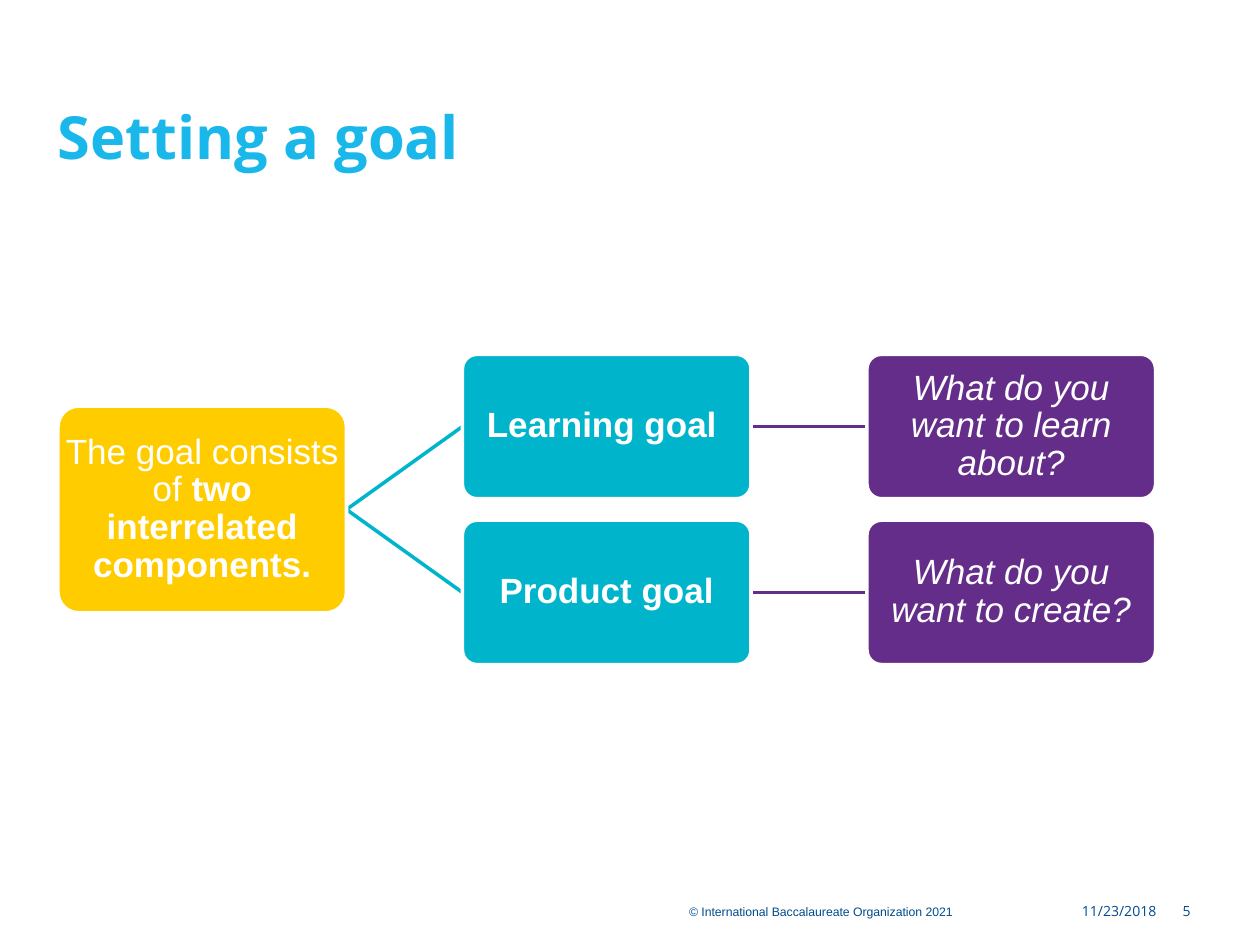
from lxml import etree
from pptx import Presentation
from pptx.dml.color import RGBColor
from pptx.enum.shapes import MSO_CONNECTOR, MSO_SHAPE
from pptx.enum.text import MSO_ANCHOR, MSO_AUTO_SIZE, PP_ALIGN
from pptx.oxml.ns import qn
from pptx.util import Pt

ROUNDED = MSO_SHAPE.ROUNDED_RECTANGLE
STRAIGHT = MSO_CONNECTOR.STRAIGHT
LEFT, CENTER, RIGHT = PP_ALIGN.LEFT, PP_ALIGN.CENTER, PP_ALIGN.RIGHT
TOP, MIDDLE, BOTTOM = MSO_ANCHOR.TOP, MSO_ANCHOR.MIDDLE, MSO_ANCHOR.BOTTOM
LEFT_SIDE, RIGHT_SIDE = 1, 3

COLORS = {
    "white": "FFFFFF",
    "sky": "1AB7EA",
    "navy": "004B8D",
    "yellow": "FFCC00",
    "teal": "00B5CB",
    "purple": "652D8A",
}

# Diagram grid: three columns, two rows, the root centred on the rows
BOX_WIDTH, GOAL_HEIGHT, ROOT_HEIGHT = 164.9, 82.5, 118.1
COLUMN_LEFT, COLUMN_STEP = 33.1, 231.15
ROW_TOP, ROW_STEP = 202.5, 94.8
ROOT_TOP = ROW_TOP + (ROW_STEP + GOAL_HEIGHT - ROOT_HEIGHT) / 2

GOALS = [
    ("Learning goal ", "What do you want to learn about?"),
    ("Product goal", "What do you want to create?"),
]


def color(name):
    return RGBColor.from_string(COLORS[name])


def write(shape, *spans, font="Arial", size=20, ink="white", align=CENTER,
          anchor=MIDDLE, inset=0, spacing=None):
    """Fill a shape with one paragraph of (text, bold, italic) spans."""
    frame = shape.text_frame
    frame.word_wrap = True
    frame.auto_size = MSO_AUTO_SIZE.NONE
    frame.vertical_anchor = anchor
    frame.margin_left = frame.margin_right = Pt(inset)
    frame.margin_top = frame.margin_bottom = Pt(inset)
    para = frame.paragraphs[0]
    para.alignment = align
    para.line_spacing = spacing
    for text, bold, italic in spans:
        span = para.add_run()
        span.text = text
        span.font.name = font
        span.font.size = Pt(size)
        span.font.bold = bold
        span.font.italic = italic
        span.font.color.rgb = color(ink)


def add_title(page, text):
    title = page.shapes.title
    title.left, title.top, title.width, title.height = Pt(33), Pt(25), Pt(647), Pt(73)
    write(title, (text, True, False), font="Open Sans", size=34, ink="sky",
          align=LEFT, anchor=BOTTOM)


def add_footer(page, text, left, width, **style):
    box = page.shapes.add_textbox(Pt(left), Pt(513.4), Pt(width), Pt(11.5))
    write(box, (text, False, False), ink="navy", anchor=TOP, **style)


def add_box(page, column, top, height, fill, *spans):
    box = page.shapes.add_shape(ROUNDED, Pt(COLUMN_LEFT + column * COLUMN_STEP),
                                Pt(top), Pt(BOX_WIDTH), Pt(height))
    box.adjustments[0] = 0.1
    box.shadow.inherit = False
    box.fill.solid()
    box.fill.fore_color.rgb = color(fill)
    box.line.color.rgb = color("white")
    box.line.width = Pt(2)
    write(box, *spans, inset=0.9, spacing=0.9)
    return box


def join(page, start, end, ink):
    line = page.shapes.add_connector(STRAIGHT, 0, 0, 0, 0)
    line.begin_connect(start, RIGHT_SIDE)
    line.end_connect(end, LEFT_SIDE)
    line.line.color.rgb = color(ink)
    line.line.width = Pt(2)
    element = line._element
    etree.SubElement(element.spPr, qn("a:effectLst"))
    # Send behind the boxes so that their white outlines trim the ends
    element.getparent().insert(2, element)


def add_diagram(page):
    root = add_box(page, 0, ROOT_TOP, ROOT_HEIGHT, "yellow",
                   ("The goal consists of ", False, False),
                   ("two interrelated components.", True, False))
    for row, (goal_text, question_text) in enumerate(GOALS):
        top = ROW_TOP + row * ROW_STEP
        goal = add_box(page, 1, top, GOAL_HEIGHT, "teal", (goal_text, True, False))
        question = add_box(page, 2, top, GOAL_HEIGHT, "purple",
                           (question_text, False, True))
        join(page, root, goal, "teal")
        join(page, goal, question, "purple")


def main():
    deck = Presentation()
    deck.slide_width, deck.slide_height = Pt(720), Pt(540)
    page = deck.slides.add_slide(deck.slide_layouts[5])
    add_title(page, "Setting a goal")
    add_diagram(page)
    # Footer line
    add_footer(page, "© International Baccalaureate Organization 2021", 393.8, 192.2,
               size=7, align=LEFT, spacing=1.43)
    for text, left, width in (("11/23/2018", 595.4, 65.5), ("5", 660.2, 20.2)):
        add_footer(page, text, left, width, font="Open Sans", size=8,
                   align=RIGHT, spacing=1.25)
    deck.save("out.pptx")


if __name__ == "__main__":
    main()
